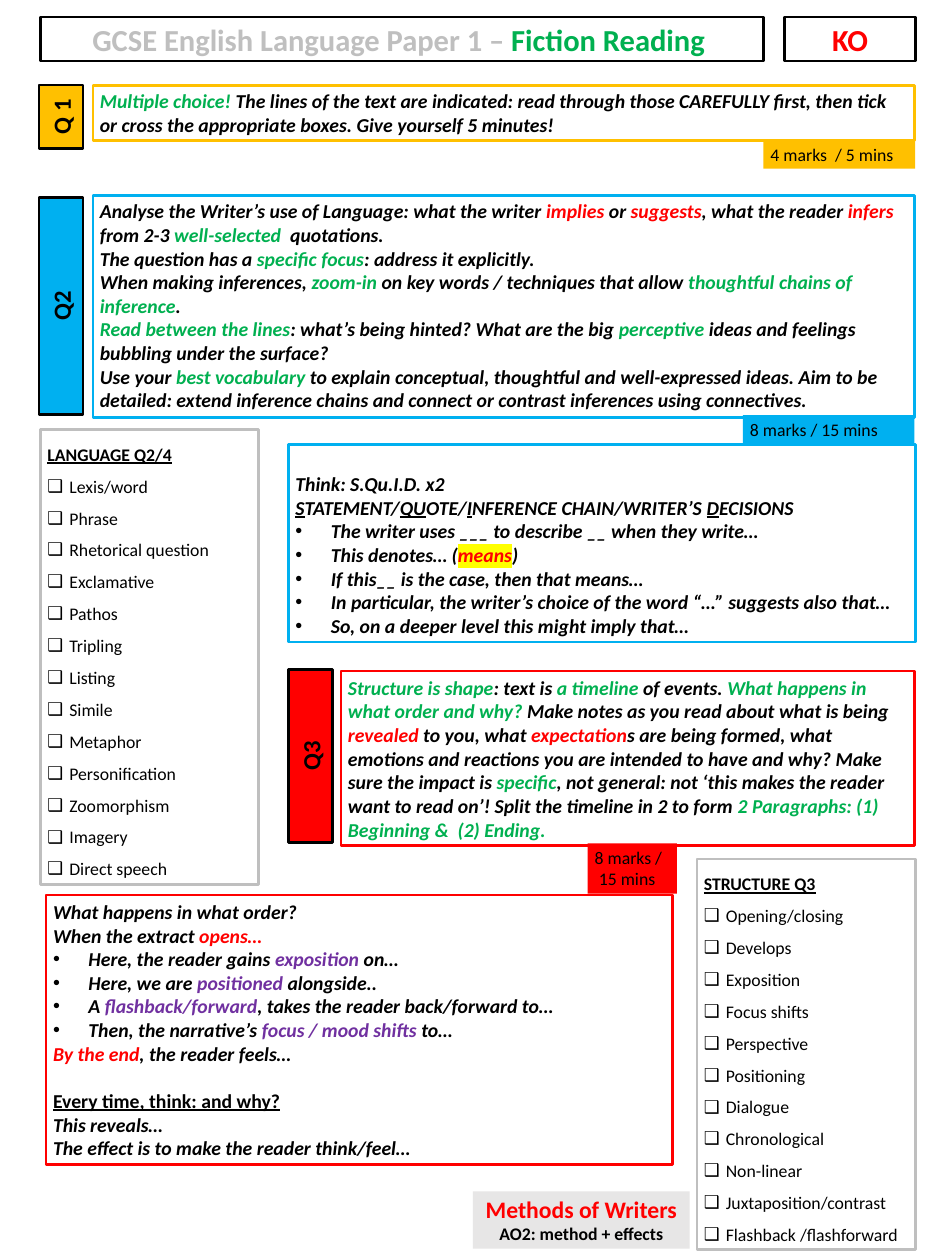
from dataclasses import dataclass
from lxml.etree import SubElement
from pptx import Presentation
from pptx.dml.color import RGBColor
from pptx.enum.shapes import MSO_SHAPE
from pptx.enum.text import MSO_ANCHOR as Anchor, MSO_AUTO_SIZE as AutoSize, PP_ALIGN as Align
from pptx.oxml.ns import qn
from pptx.util import Inches, Pt


@dataclass(frozen=True)
class Theme:
    font: str = "Calibri"
    black: str = "000000"
    green: str = "00B050"
    red: str = "FF0000"
    purple: str = "7030A0"
    amber: str = "FFC000"
    blue: str = "00B0F0"
    grey: str = "BFBFBF"
    pale: str = "E7E6E6"
    yellow: str = "FFFF00"
    title: int = 31
    tab: int = 25
    methods: int = 24
    body: int = 20
    small: int = 18
    border: float = 2.75


THEME = Theme()


@dataclass
class Run:
    text: str
    color: str = THEME.black
    underline: bool = False
    highlight: str = ""


@dataclass
class Line:
    runs: list
    size: int = THEME.body
    bold: bool = True
    italic: bool = True
    align: Align = Align.LEFT
    bullet: str = ""
    indent: float = 0
    spacing: float = 1
    before: int = 0


def green(text):
    return Run(text, THEME.green)


def red(text):
    return Run(text, THEME.red)


def purple(text):
    return Run(text, THEME.purple)


def under(text):
    return Run(text, underline=True)


def line(*parts, **options):
    return Line([Run(part) if isinstance(part, str) else part for part in parts], **options)


def point(*parts):
    return line(*parts, bullet="•", indent=0.5)


def centred(*parts, size):
    return line(*parts, size=size, italic=False, align=Align.CENTER)


def write_run(para, run, style):
    span = para.add_run()
    span.text = run.text
    font = span.font
    font.name, font.size = THEME.font, Pt(style.size)
    font.bold, font.italic, font.underline = style.bold, style.italic, run.underline
    font.color.rgb = RGBColor.from_string(run.color)
    if run.highlight:
        properties = font.fill._xPr
        mark = SubElement(properties, qn("a:highlight"))
        SubElement(mark, qn("a:srgbClr"), val=run.highlight)
        properties.find(qn("a:solidFill")).addnext(mark)


def write_line(para, style):
    para.alignment = style.align
    para.line_spacing = style.spacing
    if style.before:
        para.space_before = Pt(style.before)
    if style.indent:
        properties = para._p.get_or_add_pPr()
        properties.set("marL", str(Inches(style.indent)))
        if style.bullet:
            properties.set("indent", str(-Inches(style.indent)))
            SubElement(properties, qn("a:buFont"), typeface="Arial")
            SubElement(properties, qn("a:buChar"), char=style.bullet)
    for run in style.runs:
        write_run(para, run, style)


def add_box(page, place, lines, fill="", border="", anchor=Anchor.TOP, top=0.05):
    box = page.shapes.add_shape(MSO_SHAPE.RECTANGLE, *map(Inches, place))
    box.shadow.inherit = False
    if fill:
        box.fill.solid()
        box.fill.fore_color.rgb = RGBColor.from_string(fill)
    else:
        box.fill.background()
    if border:
        box.line.color.rgb = RGBColor.from_string(border)
        box.line.width = Pt(THEME.border)
    else:
        box.line.fill.background()
    frame = box.text_frame
    frame.word_wrap, frame.auto_size = True, AutoSize.NONE
    frame.vertical_anchor, frame.margin_top = anchor, Inches(top)
    for index, style in enumerate(lines):
        write_line(frame.add_paragraph() if index else frame.paragraphs[0], style)
    return box


def add_tab(page, left, top, height, label, fill):
    box = add_box(page, (left, top, 0.62, height), [centred(label, size=THEME.tab)],
                  fill, THEME.black, Anchor.MIDDLE)
    box.text_frame._txBody.bodyPr.set("vert", "vert270")


def add_tag(page, place, fill, *lines):
    add_box(page, place, lines, fill)


def tag_line(text, indent=0):
    return line(text, size=THEME.small, bold=False, italic=False, indent=indent)


def add_checklist(page, place, heading, terms):
    shared = dict(size=THEME.small, italic=False, align=Align.JUSTIFY, spacing=1.5)
    lines = [line(under(heading), **shared)]
    lines += [line(term, bold=False, bullet="❑", indent=0.31, **shared) for term in terms]
    add_box(page, place, lines, border=THEME.grey)


def add_header(page):
    add_box(page, (11.07, 0.24, 1.84, 0.62), [centred(red("KO"), size=THEME.title)],
            border=THEME.black)
    title = centred(Run("GCSE English Language Paper 1 – ", THEME.grey),
                    green("Fiction Reading "), size=THEME.title)
    add_box(page, (0.57, 0.24, 10.2, 0.62), [title], border=THEME.black)


def add_question_one(page):
    add_tab(page, 0.55, 1.2, 0.9, "Q 1", THEME.amber)
    add_box(page, (1.31, 1.21, 11.59, 0.77), [
        line(green("Multiple choice! "), "The lines of the text are indicated: read through those "
             "CAREFULLY first, then tick or cross the appropriate boxes. Give yourself 5 minutes!"),
    ], border=THEME.amber)
    add_tag(page, (10.77, 1.98, 2.14, 0.4), THEME.amber, tag_line("4 marks  / 5 mins"))


def add_question_two(page):
    add_tab(page, 0.55, 2.79, 3.06, "Q2", THEME.blue)
    add_box(page, (1.31, 2.76, 11.59, 3.13), [
        line("Analyse the Writer’s use of Language: what the writer ", red("implies"), " or ",
             red("suggests"), ", what the reader ", red("infers "), "from 2-3 ",
             green("well-selected"), "  quotations."),
        line("The question has a ", green("specific focus"), ": address it explicitly."),
        line("When making inferences, ", green("zoom-in"), " on key words / techniques that allow ",
             green("thoughtful chains of inference"), "."),
        line(green("Read between the lines"), ": what’s being hinted? What are the big ",
             green("perceptive"), " ideas and feelings bubbling under the surface?"),
        line("Use your ", green("best vocabulary "), "to explain conceptual, thoughtful and "
             "well-expressed ideas. Aim to be detailed: extend inference chains and connect or "
             "contrast inferences using connectives."),
    ], border=THEME.blue)
    add_box(page, (4.07, 6.27, 8.84, 2.79), [
        line("Think: S.Qu.I.D. x2"),
        line(under("S"), "TATEMENT/", under("QU"), "OTE/", under("I"),
             "NFERENCE CHAIN/WRITER’S ", under("D"), "ECISIONS"),
        point("The writer uses ___ to describe __ when they write…"),
        point("This denotes… (", Run("means", THEME.red, highlight=THEME.yellow), ")"),
        point("If this__ is the case, then that means…"),
        point("In particular, the writer’s choice of the word “…” suggests also that…"),
        point("So, on a deeper level this might imply that…"),
    ], border=THEME.blue, top=0.39)
    add_tag(page, (10.48, 5.86, 2.42, 0.4), THEME.blue, tag_line("8 marks / 15 mins"))


def add_question_three(page):
    add_tab(page, 4.07, 9.45, 2.44, "Q3", THEME.red)
    add_box(page, (0.65, 12.63, 8.84, 3.8), [
        line("What happens in what order?"),
        line("When the extract ", red("opens…")),
        point("Here, the reader gains ", purple("exposition"), " on…"),
        point("Here, we are ", purple("positioned "), "alongside.."),
        point("A ", purple("flashback/forward"), ", takes the reader back/forward to…"),
        point("Then, the narrative’s ", purple("focus / mood shifts"), " to…"),
        line(red("By the end"), ", the reader feels…"),
        line(under("Every time, think: and why?"), italic=False, before=24),
        line("This reveals…"),
        line("The effect is to make the reader think/feel…"),
    ], border=THEME.red, anchor=Anchor.MIDDLE)
    add_box(page, (4.81, 9.47, 8.09, 2.46), [
        line(green("Structure is shape"), ": text is", green(" a timeline "), "of events. ",
             green("What happens in what order and why? "),
             "Make notes as you read about what is being ", red("revealed "), "to you, what ",
             red("expectation"), "s are being formed, what emotions and reactions you are intended "
             "to have and why? Make sure the impact is ", green("specific"),
             ", not general: not ‘this makes the reader want to read on’! Split the timeline in 2 "
             "to form ", green("2 Paragraphs: (1) Beginning &  (2) Ending.")),
    ], border=THEME.red, anchor=Anchor.MIDDLE)
    add_tag(page, (8.29, 11.9, 1.26, 0.71), THEME.red,
            tag_line("8 marks /"), tag_line("15 mins", indent=0.06))


def main():
    deck = Presentation()
    deck.slide_width, deck.slide_height = Inches(13.33), Inches(17.78)
    page = deck.slides.add_slide(deck.slide_layouts[6])
    add_header(page)
    add_question_one(page)
    add_question_two(page)
    add_question_three(page)
    add_checklist(page, (0.57, 6.06, 3.08, 6.42), "LANGUAGE Q2/4", [
        "Lexis/word", "Phrase", "Rhetorical question", "Exclamative", "Pathos", "Tripling",
        "Listing", "Simile", "Metaphor", "Personification", "Zoomorphism", "Imagery",
        "Direct speech"])
    add_checklist(page, (9.83, 12.12, 3.08, 5.51), "STRUCTURE Q3", [
        "Opening/closing", "Develops", "Exposition", "Focus shifts", "Perspective", "Positioning",
        "Dialogue", "Chronological", "Non-linear", "Juxtaposition/contrast",
        "Flashback /flashforward"])
    add_box(page, (6.67, 16.81, 3.06, 0.81), [
        centred(red("Methods of Writers"), size=THEME.methods),
        centred("AO2: method + effects", size=THEME.small),
    ], fill=THEME.pale)
    deck.save("out.pptx")


if __name__ == "__main__":
    main()
